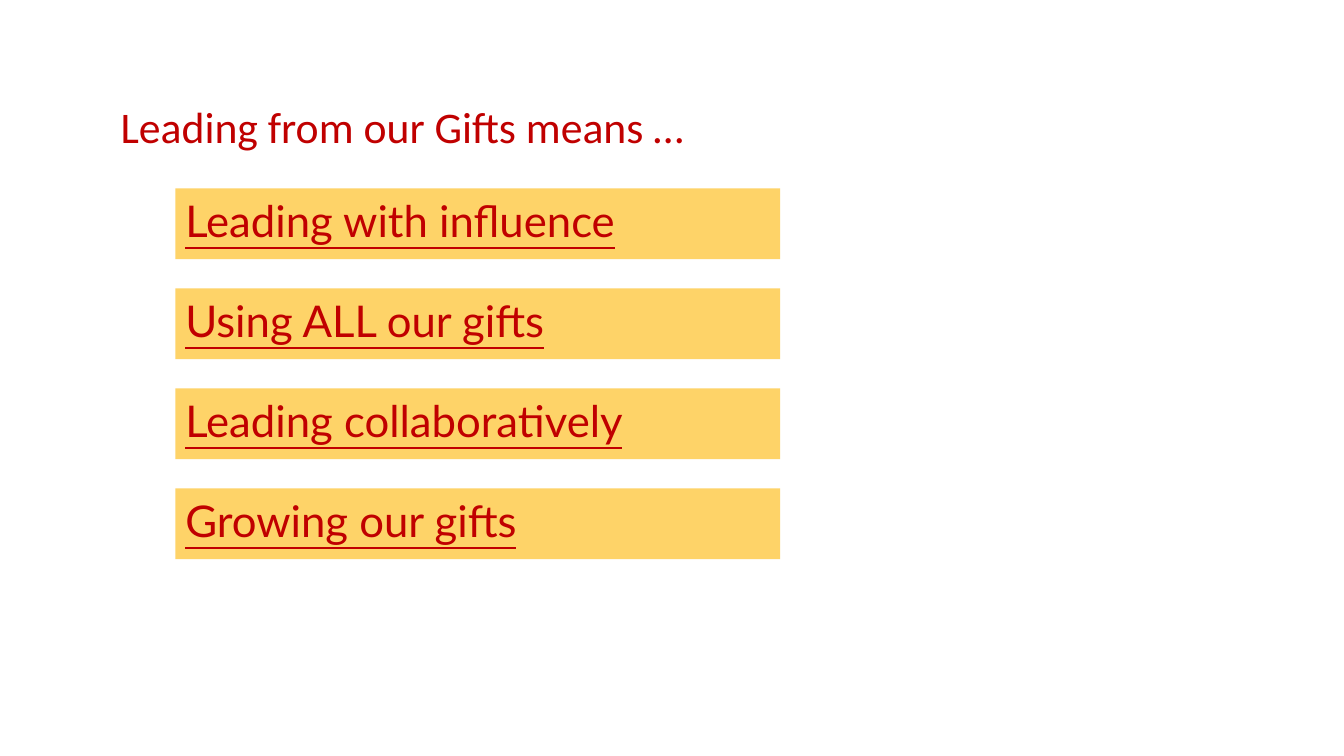
from dataclasses import dataclass

from pptx import Presentation
from pptx import util as u
from pptx.dml.color import RGBColor
from pptx.enum import shapes, text
from pptx.shapes.autoshape import Shape
from pptx.slide import Slide


@dataclass(frozen=True)
class Theme:
    ink: RGBColor = RGBColor(0xC0, 0x00, 0x00)
    bar: RGBColor = RGBColor(0xFE, 0xD3, 0x68)
    title_font: str = "Calibri"
    bar_font: str = "Lato"
    size: u.Length = u.Pt(31.2)


@dataclass(frozen=True)
class Meaning:
    label: str
    row: int


THEME = Theme()
MEANINGS = [
    Meaning("Leading with influence", 0),
    Meaning("Using ALL our gifts", 1),
    Meaning("Leading collaboratively", 2),
    Meaning("Growing our gifts", 3),
]
BAR_LEFT, BAR_TOP = u.Cm(4.42), u.Cm(4.75)
BAR_WIDTH, BAR_HEIGHT = u.Cm(15.24), u.Cm(1.78)
BAR_PITCH = u.Cm(2.52)


def write(box: Shape, words: str, font: str, anchor: text.MSO_ANCHOR, underline: bool) -> None:
    frame = box.text_frame
    frame.word_wrap = True
    frame.vertical_anchor = anchor
    para = frame.paragraphs[0]
    para.text = words
    para.alignment = text.PP_ALIGN.LEFT
    para.font.name = font
    para.font.size = THEME.size
    para.font.color.rgb = THEME.ink
    para.font.underline = underline


def add_title(page: Slide, words: str) -> None:
    box = page.shapes.add_textbox(u.Cm(2.79), u.Cm(2.29), u.Cm(17.27), u.Cm(1.78))
    write(box, words, THEME.title_font, text.MSO_ANCHOR.MIDDLE, underline=False)


def add_bar(page: Slide, meaning: Meaning) -> None:
    bar = page.shapes.add_shape(
        shapes.MSO_SHAPE.RECTANGLE,
        BAR_LEFT, BAR_TOP + meaning.row * BAR_PITCH, BAR_WIDTH, BAR_HEIGHT,
    )
    bar.shadow.inherit = False
    bar.fill.solid()
    bar.fill.fore_color.rgb = THEME.bar
    bar.line.fill.background()
    write(bar, meaning.label, THEME.bar_font, text.MSO_ANCHOR.TOP, underline=True)


def main() -> None:
    deck = Presentation()
    deck.slide_width, deck.slide_height = u.Cm(33.87), u.Cm(19.05)
    page = deck.slides.add_slide(deck.slide_layouts[6])
    add_title(page, "Leading from our Gifts means …")
    for meaning in MEANINGS:
        add_bar(page, meaning)
    deck.save("out.pptx")


if __name__ == "__main__":
    main()
